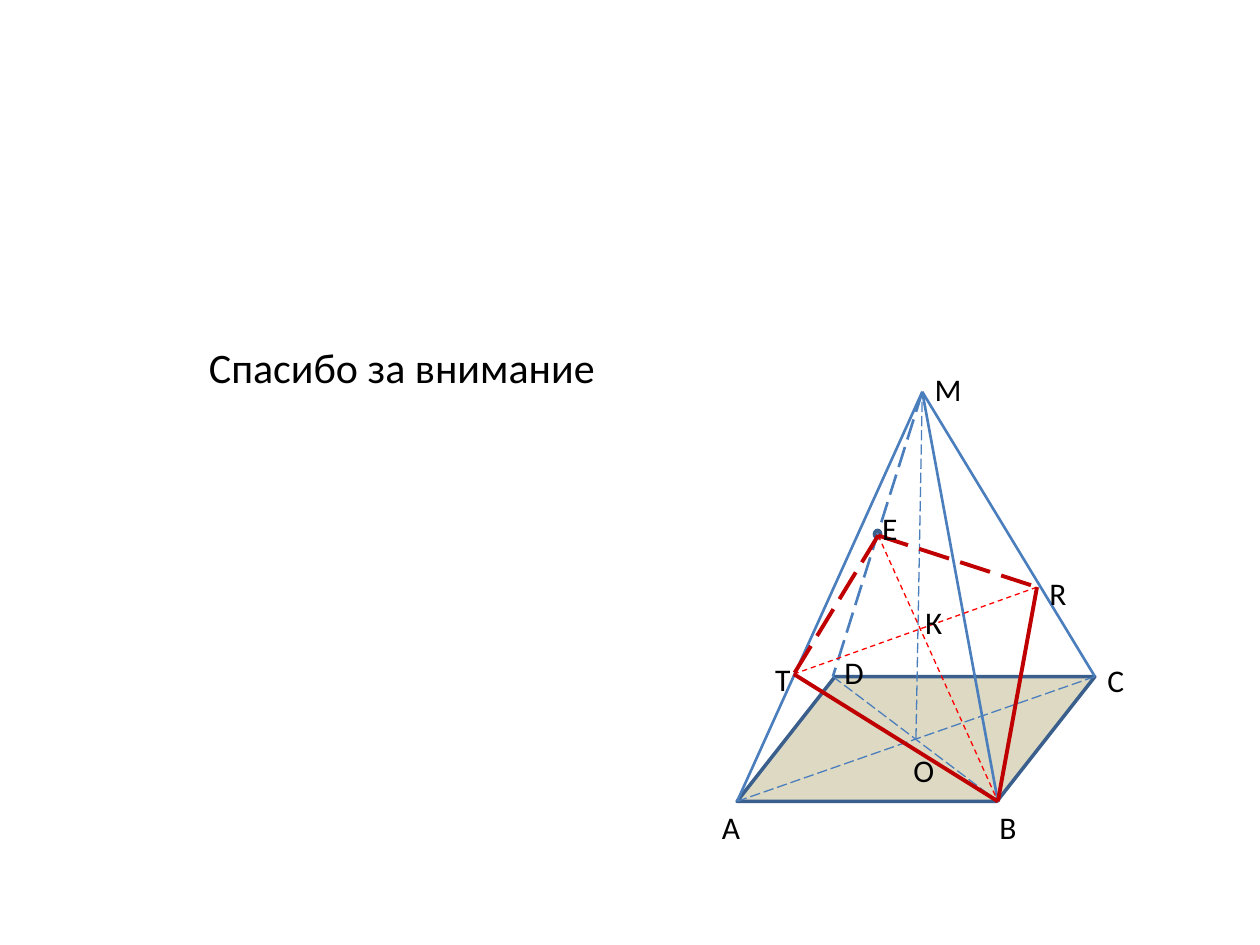
from pptx import Presentation
from pptx.dml.color import RGBColor
from pptx.enum import dml, shapes, text
from pptx.oxml import parse_xml
from pptx.util import Inches, Pt

BLUE, EDGE, RED, DARK = "4B7EBC", "3A5F8C", "FF0000", "C00000"
SOLID, DASH, LONG = (dml.MSO_LINE.SOLID, dml.MSO_LINE.DASH,
                     dml.MSO_LINE.LONG_DASH)
NO_FX = ('<a:effectLst xmlns:a='
         '"http://schemas.openxmlformats.org/drawingml/2006/main"/>')


def color(code):
    return RGBColor.from_string(code)


def add_text(slide, words, box, size):
    shape = slide.shapes.add_textbox(*map(Inches, box))
    frame = shape.text_frame
    frame.word_wrap = True
    frame.auto_size = text.MSO_AUTO_SIZE.SHAPE_TO_FIT_TEXT
    frame.text = words
    font = frame.paragraphs[0].runs[0].font
    font.name, font.size = "Calibri", Pt(size)
    font.color.rgb = color("000000")


def add_line(slide, start, end, ink, width, dash):
    line = slide.shapes.add_connector(
        shapes.MSO_CONNECTOR.STRAIGHT, *map(Inches, start + end))
    line.line.color.rgb = color(ink)
    line.line.width = Pt(width)
    line.line.dash_style = dash
    line._element.spPr.append(parse_xml(NO_FX))


def add_solid(slide, kind, box, fill):
    shape = slide.shapes.add_shape(kind, *map(Inches, box))
    shape.shadow.inherit = False
    shape.fill.solid()
    shape.fill.fore_color.rgb = color(fill)
    shape.line.color.rgb = color(EDGE)
    shape.line.width = Pt(2)
    return shape


def add_pyramid(slide, left, top, width, height):
    """Draw pyramid MABCD with its section TERB inside the box."""
    deep, skew = 0.99, 0.77
    back = height - deep
    spots = {
        "A": (0, height), "B": (width - skew, height),
        "C": (width, back), "D": (skew - 0.01, back),
        "M": (1.47, 0), "O": (1.42, 2.75),
        "E": (1.12, 1.14), "T": (0.45, 2.24), "R": (2.38, 1.55),
    }
    at = {name: (left + x, top + y) for name, (x, y) in spots.items()}

    def join(pairs, *style):
        for pair in pairs.split():
            add_line(slide, at[pair[0]], at[pair[1]], *style)

    base = add_solid(slide, shapes.MSO_SHAPE.PARALLELOGRAM,
                     (left, top + back, width, deep), "DDD9C3")
    base.adjustments[0] = 0.785
    join("DB CA OM", BLUE, 0.75, LONG)
    join("MD", BLUE, 1.5, LONG)
    join("MA MC MB", BLUE, 1.5, SOLID)
    add_solid(slide, shapes.MSO_SHAPE.OVAL,
              (left + 1.09, top + 1.1, 0.05, 0.06), "4F81BD")
    join("EB TR", RED, 0.75, DASH)
    join("ET ER", DARK, 2.25, LONG)
    join("RB TB", DARK, 2.25, SOLID)

    labels = [
        ("М", 1.47, -0.22, 0.38), ("А", -0.22, 3.25, 0.22),
        ("D", 0.79, 2.02, 0.16), ("В", 2.02, 3.25, 0.16),
        ("С", 2.84, 2.09, 0.22), ("Е", 1.14, 0.88, 0.11),
        ("О", 1.3, 2.8, 0.22), ("К", 1.42, 1.63, 0.17),
        ("Т", 0.23, 2.08, 0.17), ("R", 2.38, 1.4, 0.23),
    ]
    for name, x, y, wide in labels:
        add_text(slide, name, (left + x, top + y, wide, 0.28), 18)


def main():
    deck = Presentation()
    deck.slide_width, deck.slide_height = Inches(10), Inches(7.5)
    slide = deck.slides.add_slide(deck.slide_layouts[6])
    add_text(slide, "Спасибо за внимание", (1.56, 2.66, 4.3, 0.5), 24)
    add_pyramid(slide, 5.85, 3.11, 2.84, 3.25)
    deck.save("out.pptx")


if __name__ == "__main__":
    main()
